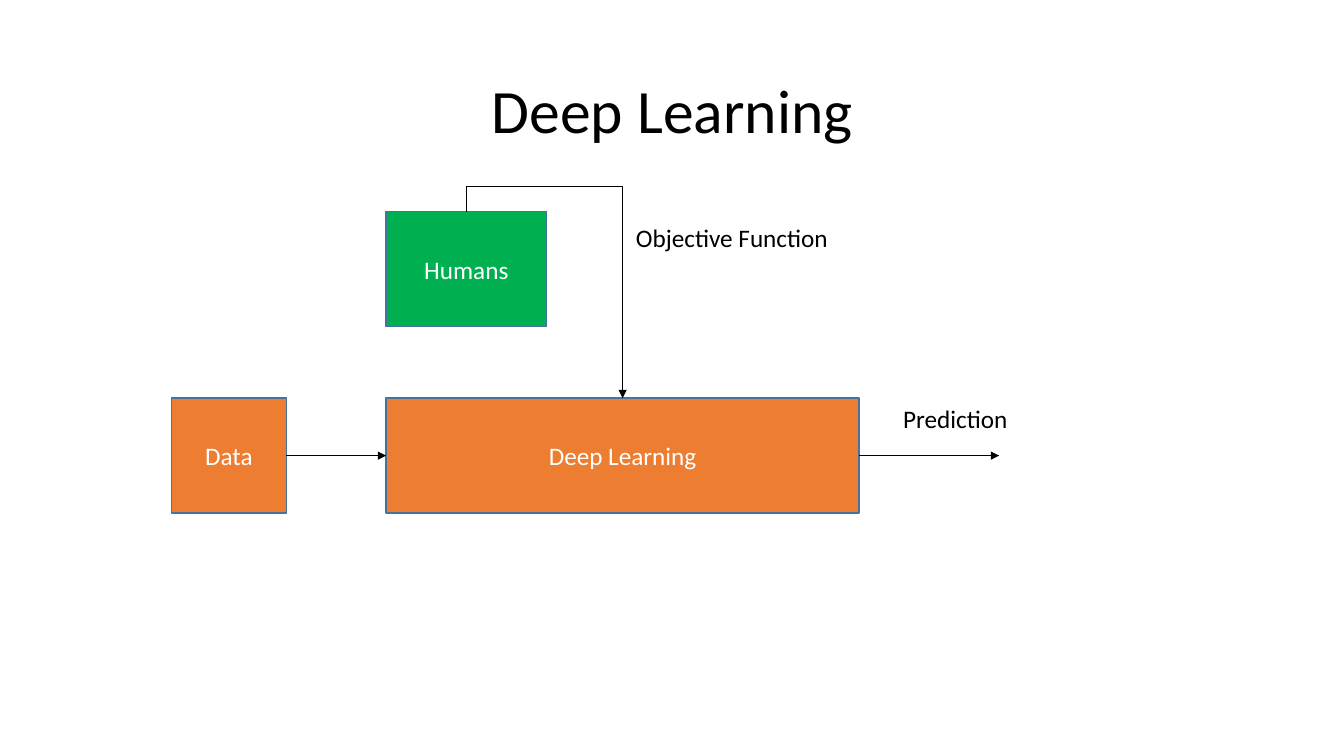
from dataclasses import dataclass

from lxml import etree
from pptx import Presentation
from pptx import util as u
from pptx.dml.color import RGBColor
from pptx.enum import shapes, text
from pptx.oxml.ns import qn

TOP, LEFT, BOTTOM, RIGHT = range(4)


@dataclass(frozen=True)
class Theme:
    font: str = "Calibri"
    title_size: float = 44
    body_size: float = 18
    ink: str = "000000"
    light: str = "FFFFFF"
    machine: str = "ED7D31"
    human: str = "00B050"
    border: str = "43739E"
    border_width: float = 1
    arrow_width: float = 0.5


class Diagram:
    def __init__(self, slide, theme):
        self.shapes = slide.shapes
        self.theme = theme

    def set_wording(self, shape, wording, size, color, align):
        frame = shape.text_frame
        frame.word_wrap = True
        paragraph = frame.paragraphs[0]
        paragraph.text = wording
        paragraph.alignment = align
        paragraph.font.name = self.theme.font
        paragraph.font.size = u.Pt(size)
        paragraph.font.color.rgb = RGBColor.from_string(color)
        return paragraph

    def title(self, wording, *place):
        heading = self.shapes.add_textbox(*map(u.Inches, place))
        heading.text_frame.vertical_anchor = text.MSO_ANCHOR.MIDDLE
        paragraph = self.set_wording(heading, wording, self.theme.title_size,
                                     self.theme.ink, text.PP_ALIGN.CENTER)
        paragraph.line_spacing = 0.9

    def label(self, wording, *place):
        caption = self.shapes.add_textbox(*map(u.Inches, place))
        self.set_wording(caption, wording, self.theme.body_size,
                         self.theme.ink, text.PP_ALIGN.LEFT)
        caption.text_frame.auto_size = text.MSO_AUTO_SIZE.SHAPE_TO_FIT_TEXT

    def box(self, wording, fill, *place):
        block = self.shapes.add_shape(shapes.MSO_SHAPE.RECTANGLE,
                                      *map(u.Inches, place))
        block.shadow.inherit = False
        block.fill.solid()
        block.fill.fore_color.rgb = RGBColor.from_string(fill)
        block.line.color.rgb = RGBColor.from_string(self.theme.border)
        block.line.width = u.Pt(self.theme.border_width)
        block.text_frame.vertical_anchor = text.MSO_ANCHOR.MIDDLE
        self.set_wording(block, wording, self.theme.body_size,
                         self.theme.light, text.PP_ALIGN.CENTER)
        return block

    def arrow(self, source, side, target=None, target_side=LEFT,
              end=(0, 0), kind=shapes.MSO_CONNECTOR.STRAIGHT):
        link = self.shapes.add_connector(kind, 0, 0, *map(u.Inches, end))
        link.begin_connect(source, side)
        if target is not None:
            link.end_connect(target, target_side)
        link.line.color.rgb = RGBColor.from_string(self.theme.ink)
        link.line.width = u.Pt(self.theme.arrow_width)
        properties = link._element.spPr
        etree.SubElement(properties.find(qn("a:ln")), qn("a:tailEnd"),
                         type="triangle")
        etree.SubElement(properties, qn("a:effectLst"))
        return link

    def arrow_over(self, source, target, rise):
        """Leave the source's top, rise, then drop onto the target's top."""
        link = self.arrow(source, TOP, target, TOP,
                          kind=shapes.MSO_CONNECTOR.ELBOW)
        across, drop = link.width, link.height
        # A quarter turn about the centre swaps width and height
        link.left += (across - drop) // 2
        link.top += (drop - across) // 2
        link.width, link.height = drop, across
        properties = link._element.spPr
        frame = properties.find(qn("a:xfrm"))
        frame.set("rot", str(270 * 60000))
        frame.set("flipH", "1")
        bend = round(-100000 * u.Inches(rise) / drop)
        guides = properties.find(qn("a:prstGeom")).find(qn("a:avLst"))
        etree.SubElement(guides, qn("a:gd"), name="adj1", fmla=f"val {bend}")


def main():
    deck = Presentation()
    deck.slide_width, deck.slide_height = u.Inches(13.33), u.Inches(7.5)
    theme = Theme()
    diagram = Diagram(deck.slides.add_slide(deck.slide_layouts[6]), theme)

    diagram.title("Deep Learning", 0.92, 0.4, 11.5, 1.45)

    # Boxes: the machine row, with the humans above the model
    row, model_left, height = 3.95, 3.83, 1.14
    data = diagram.box("Data", theme.machine, 1.7, row, height, height)
    model = diagram.box("Deep Learning", theme.machine,
                        model_left, row, 4.69, height)
    humans = diagram.box("Humans", theme.human, model_left, 2.1, 1.59, height)

    # Arrows
    diagram.arrow(data, RIGHT, model, LEFT)
    diagram.arrow_over(humans, model, rise=0.25)
    diagram.arrow(model, RIGHT, end=(9.91, row + height / 2))

    # Arrow labels
    diagram.label("Prediction", 8.86, row, 1.63, 0.4)
    diagram.label("Objective Function", 6.21, 2.16, 2.17, 0.4)

    deck.save("out.pptx")


if __name__ == "__main__":
    main()
